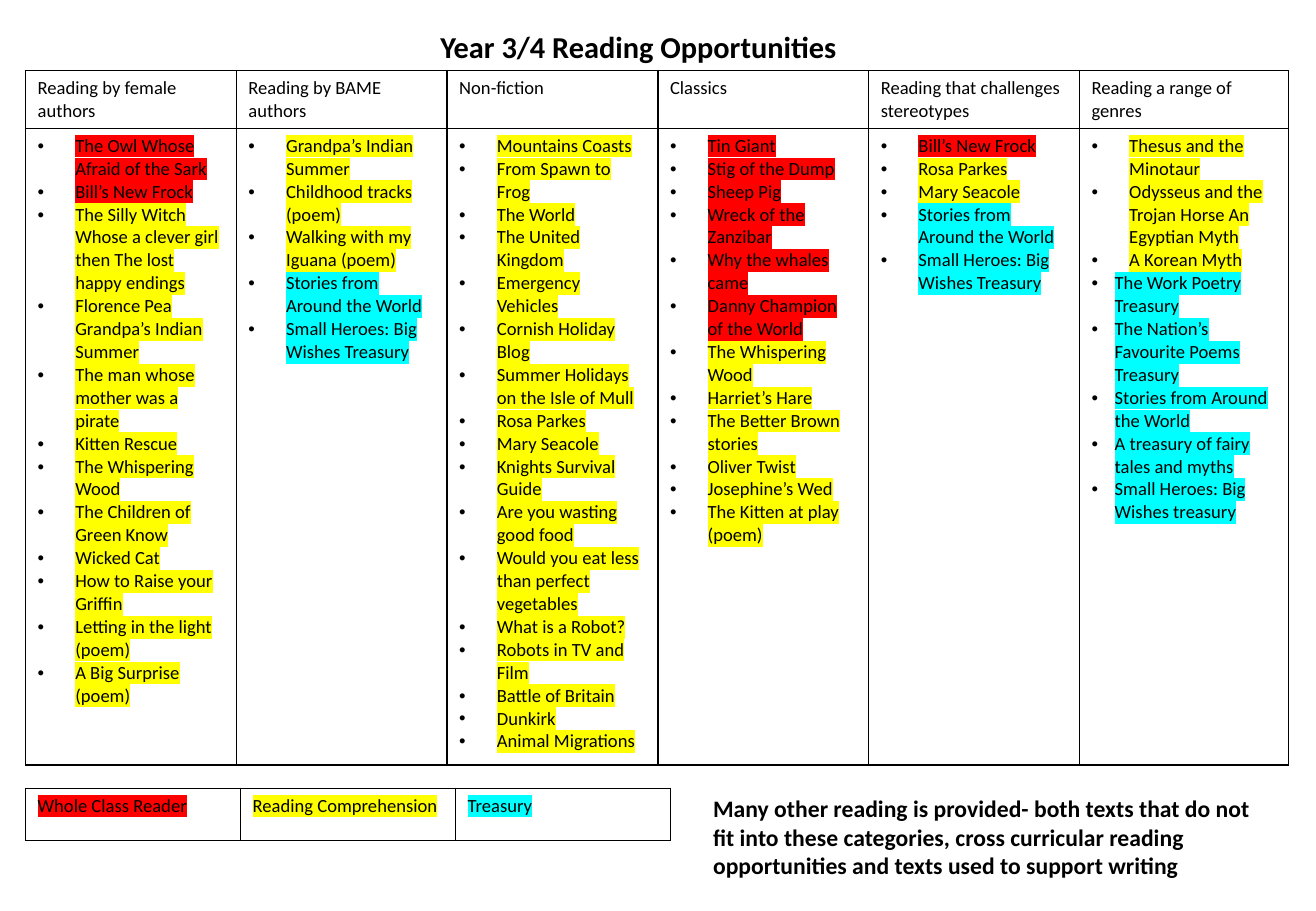
from dataclasses import dataclass

import pptx
import pptx.dml.color
import pptx.enum.text
import pptx.oxml
import pptx.oxml.ns
import pptx.util
from pptx.util import Inches

FONT = "Calibri"
BLACK, RED, YELLOW, CYAN = "000000", "FF0000", "FFFF00", "00FFFF"
NS = pptx.oxml.ns.nsdecls("a")
LEFT = 0.21


@dataclass
class Books:
    """A run of titles that share one highlight."""
    highlight: str
    titles: list[str]
    indent: float = 0.31


@dataclass
class Category:
    heading: str
    groups: list[Books]


@dataclass
class Key:
    label: str
    highlight: str


TREASURIES = Books(CYAN, ["Stories from Around the World",
                          "Small Heroes: Big Wishes Treasury"])

CATEGORIES = [
    Category("Reading by female authors", [
        Books(RED, ["The Owl Whose Afraid of the Sark", "Bill’s New Frock"]),
        Books(YELLOW, [
            "The Silly Witch Whose a clever girl then The lost happy endings",
            "Florence Pea Grandpa’s Indian Summer",
            "The man whose mother was a pirate", "Kitten Rescue",
            "The Whispering Wood", "The Children of Green Know", "Wicked Cat",
            "How to Raise your Griffin", "Letting in the light (poem)",
            "A Big Surprise (poem)"]),
    ]),
    Category("Reading by BAME authors", [
        Books(YELLOW, ["Grandpa’s Indian Summer", "Childhood tracks (poem)",
                       "Walking with my Iguana (poem)"]),
        TREASURIES,
    ]),
    Category("Non-fiction", [
        Books(YELLOW, [
            "Mountains Coasts", "From Spawn to Frog", "The World",
            "The United Kingdom", "Emergency Vehicles", "Cornish Holiday Blog",
            "Summer Holidays on the Isle of Mull", "Rosa Parkes",
            "Mary Seacole", "Knights Survival Guide",
            "Are you wasting good food",
            "Would you eat less than perfect vegetables", "What is a Robot?",
            "Robots in TV and Film", "Battle of Britain", "Dunkirk",
            "Animal Migrations"]),
    ]),
    Category("Classics", [
        Books(RED, ["Tin Giant", "Stig of the Dump", "Sheep Pig",
                    "Wreck of the Zanzibar", "Why the whales came",
                    "Danny Champion of the World"]),
        Books(YELLOW, ["The Whispering Wood", "Harriet’s Hare",
                       "The Better Brown stories", "Oliver Twist",
                       "Josephine’s Wed", "The Kitten at play (poem)"]),
    ]),
    Category("Reading that challenges stereotypes", [
        Books(RED, ["Bill’s New Frock"]),
        Books(YELLOW, ["Rosa Parkes", "Mary Seacole"]),
        TREASURIES,
    ]),
    Category("Reading a range of genres", [
        Books(YELLOW, ["Thesus and the Minotaur",
                       "Odysseus and the Trojan Horse An Egyptian Myth",
                       "A Korean Myth"]),
        Books(CYAN, ["The Work Poetry Treasury",
                     "The Nation’s Favourite Poems Treasury",
                     "Stories from Around the World",
                     "A treasury of fairy tales and myths",
                     "Small Heroes: Big Wishes treasury"], indent=0.19),
    ]),
]

KEYS = [Key("Whole Class Reader", RED), Key("Reading Comprehension", YELLOW),
        Key("Treasury", CYAN)]


def rgb(colour: str) -> pptx.dml.color.RGBColor:
    return pptx.dml.color.RGBColor.from_string(colour)


def write(p, text: str, size: float = 11, bold: bool = False,
          highlight: str = "") -> None:
    p.text = text
    for r in p.runs:
        r.font.size = pptx.util.Pt(size)
        r.font.bold = bold
        r.font.color.rgb = rgb(BLACK)
        if highlight:
            r.font._element.append(pptx.oxml.parse_xml(
                f'<a:highlight {NS}><a:srgbClr val="{highlight}"/></a:highlight>'))
        r.font.name = FONT


def add_bullet(p, indent: float) -> None:
    pPr = p._p.get_or_add_pPr()
    pPr.set("marL", str(Inches(indent)))
    pPr.set("indent", str(-Inches(indent)))
    pPr.append(pptx.oxml.parse_xml(f'<a:buFont {NS} typeface="Arial"/>'))
    pPr.append(pptx.oxml.parse_xml(f'<a:buChar {NS} char="•"/>'))


def add_grid(s, top: float, widths: list[float], heights: list[float]):
    """Add a plain table with thin black borders."""
    table = s.shapes.add_table(
        len(heights), len(widths), Inches(LEFT), Inches(top),
        Inches(sum(widths)), Inches(sum(heights))).table
    table.first_row = table.horz_banding = False
    for column, width in zip(table.columns, widths):
        column.width = Inches(width)
    for row, height in zip(table.rows, heights):
        row.height = Inches(height)
    for cell in table.iter_cells():
        tcPr = cell._tc.get_or_add_tcPr()
        for side in ("lnL", "lnR", "lnT", "lnB"):
            tcPr.append(pptx.oxml.parse_xml(
                f'<a:{side} {NS} w="12700"><a:solidFill>'
                f'<a:srgbClr val="{BLACK}"/></a:solidFill></a:{side}>'))
        cell.fill.background()
    return table


def fill_books(tf, groups: list[Books]) -> None:
    books = [(group, title) for group in groups for title in group.titles]
    for i, (group, title) in enumerate(books):
        p = tf.add_paragraph() if i else tf.paragraphs[0]
        write(p, title, highlight=group.highlight)
        add_bullet(p, group.indent)


def main() -> None:
    prs = pptx.Presentation()
    prs.slide_width, prs.slide_height = Inches(10.83), Inches(7.5)
    s = prs.slides.add_slide(prs.slide_layouts[5])

    # Title
    title = s.shapes.title
    title.left, title.top = Inches(2.21), Inches(0.18)
    title.width, title.height = Inches(6.09), Inches(0.4)
    tf = title.text_frame
    tf.auto_size = pptx.enum.text.MSO_AUTO_SIZE.NONE
    tf.vertical_anchor = pptx.enum.text.MSO_ANCHOR.TOP
    write(tf.paragraphs[0], "Year 3/4 Reading Opportunities", 18, True)
    tf.paragraphs[0].alignment = pptx.enum.text.PP_ALIGN.CENTER

    # Books by category
    table = add_grid(s, 0.58, [1.735] * 5 + [1.72], [0.46, 5.24])
    for col, category in enumerate(CATEGORIES):
        write(table.cell(0, col).text_frame.paragraphs[0], category.heading)
        fill_books(table.cell(1, col).text_frame, category.groups)

    # Colour key
    table = add_grid(s, 6.49, [1.77] * len(KEYS), [0.43])
    for col, key in enumerate(KEYS):
        write(table.cell(0, col).text_frame.paragraphs[0], key.label,
              highlight=key.highlight)

    # Closing note
    tf = s.shapes.add_textbox(Inches(5.77), Inches(6.49),
                              Inches(4.83), Inches(0.81)).text_frame
    tf.word_wrap = True
    write(tf.paragraphs[0],
          "Many other reading is provided- both texts that do not fit into "
          "these categories, cross curricular reading opportunities and texts "
          "used to support writing", 14, True)

    prs.save("out.pptx")


if __name__ == "__main__":
    main()
